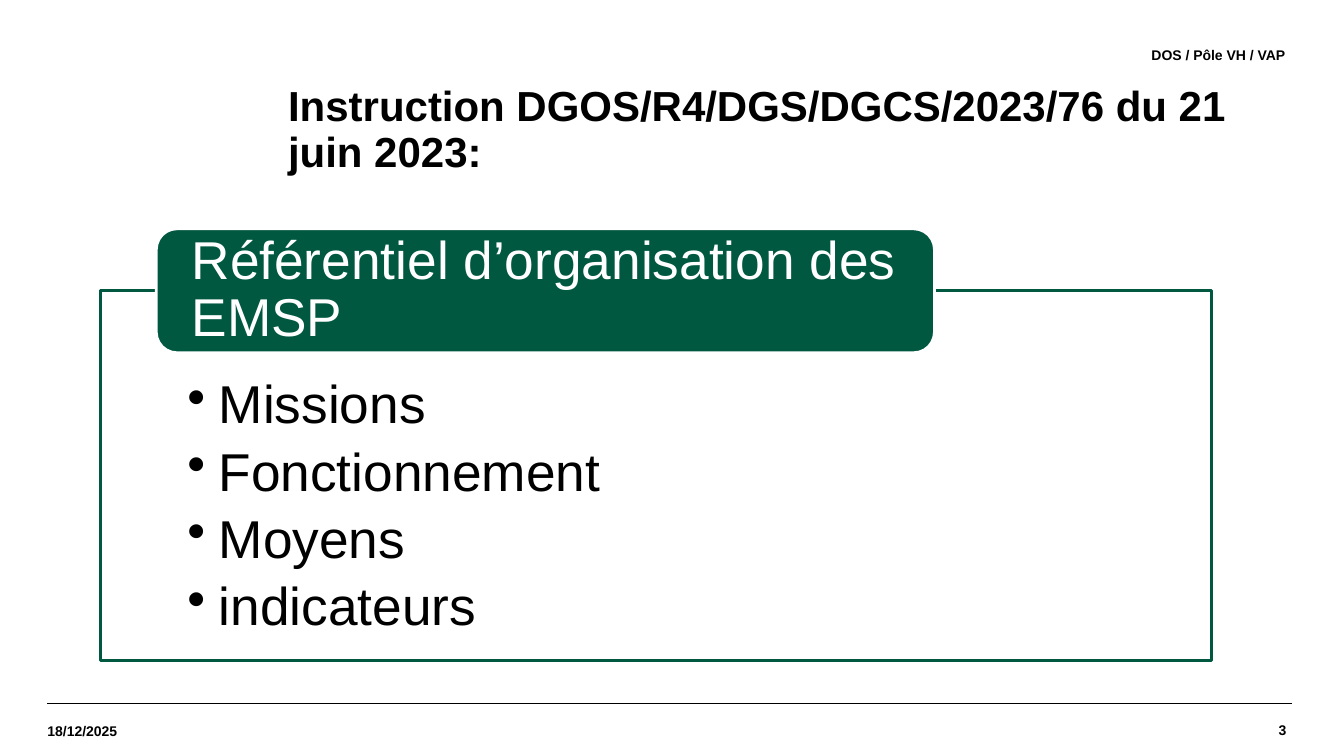
from dataclasses import dataclass
from typing import Optional

import pptx
import pptx.dml.color
import pptx.enum.shapes
import pptx.enum.text
import pptx.oxml
import pptx.oxml.ns
import pptx.util
from lxml import etree

BLACK = pptx.dml.color.RGBColor(0x00, 0x00, 0x00)
WHITE = pptx.dml.color.RGBColor(0xFF, 0xFF, 0xFF)
GREEN = pptx.dml.color.RGBColor(0x00, 0x58, 0x41)

SLIDE_WIDTH = pptx.util.Inches(13.33)
SLIDE_HEIGHT = pptx.util.Inches(7.5)
FONT = "Arial"

ALIGN = pptx.enum.text.PP_ALIGN
ANCHOR = pptx.enum.text.MSO_ANCHOR
SHAPE = pptx.enum.shapes.MSO_SHAPE


@dataclass(frozen=True)
class Area:
    """A rectangle in percent of the slide's width and height."""
    left: float
    top: float
    width: float
    height: float

    def lengths(self) -> tuple:
        return (across(self.left), down(self.top),
                across(self.width), down(self.height))


@dataclass(frozen=True)
class Style:
    """Text settings; insets (left, top, right, bottom) and indent are inches."""
    size: float
    color: pptx.dml.color.RGBColor = BLACK
    bold: bool = False
    align: ALIGN = ALIGN.LEFT
    anchor: ANCHOR = ANCHOR.MIDDLE
    insets: tuple = (0, 0, 0, 0)
    line_spacing: float = 1.0
    space_after: float = 0
    margin: float = 0
    bullet: Optional[str] = None


@dataclass(frozen=True)
class Label:
    area: Area
    text: str
    style: Style


@dataclass(frozen=True)
class Panel:
    kind: SHAPE
    area: Area
    fill: pptx.dml.color.RGBColor
    line: pptx.dml.color.RGBColor
    lines: tuple
    style: Style
    opacity: int = 100


SMALL = Style(10, bold=True)
SMALL_RIGHT = Style(10, bold=True, align=ALIGN.RIGHT)
TITLE = Style(30, bold=True, insets=(0.1, 0.05, 0.1, 0.5),
              line_spacing=0.9, margin=0.02)
HEADING = Style(38, WHITE, insets=(0.29, 0, 0.29, 0), line_spacing=0.9)
BULLETS = Style(38, anchor=ANCHOR.TOP, insets=(0.86, 0.87, 0.86, 0.3),
                line_spacing=0.9, space_after=7, margin=0.31, bullet="•")

RULE_TOP = 93.07
RULE_WIDTH = 92.2
RULE_LEFTS = (3.53, 3.9)

LABELS = (
    Label(Area(80.93, RULE_TOP, 14.78, 6.93), "3", SMALL_RIGHT),
    Label(Area(3.53, 93.33, 12.83, 6.67), "18/12/2025", SMALL),
    Label(Area(20.55, 15.07, 75.45, 10.53),
          "Instruction DGOS/R4/DGS/DGCS/2023/76 du 21 juin 2023:", TITLE),
    Label(Area(31.35, 3.87, 64.28, 6.93), "DOS / Pôle VH / VAP", SMALL_RIGHT),
)

PANELS = (
    Panel(SHAPE.RECTANGLE, Area(7.5, 38.4, 82.65, 48.93), WHITE, GREEN,
          ("Missions", "Fonctionnement", "Moyens", "indicateurs"),
          BULLETS, opacity=90),
    Panel(SHAPE.ROUNDED_RECTANGLE, Area(11.63, 30.27, 57.9, 16.4), GREEN, WHITE,
          ("Référentiel d’organisation des EMSP",), HEADING),
)


def across(percent: float) -> int:
    return round(SLIDE_WIDTH * percent / 100)


def down(percent: float) -> int:
    return round(SLIDE_HEIGHT * percent / 100)


def write_text(frame, lines: tuple, style: Style) -> None:
    frame.word_wrap = True
    frame.vertical_anchor = style.anchor
    (frame.margin_left, frame.margin_top, frame.margin_right,
     frame.margin_bottom) = map(pptx.util.Inches, style.insets)
    for number, line in enumerate(lines):
        para = frame.add_paragraph() if number else frame.paragraphs[0]
        para.text = line
        para.alignment = style.align
        para.line_spacing = style.line_spacing
        para.space_after = pptx.util.Pt(style.space_after)
        indent_paragraph(para, style)
        para.font.name = FONT
        para.font.size = pptx.util.Pt(style.size)
        para.font.bold = style.bold
        para.font.color.rgb = style.color


def indent_paragraph(para, style: Style) -> None:
    margin = pptx.util.Inches(style.margin)
    properties = para._p.get_or_add_pPr()
    properties.set("marL", str(margin))
    properties.set("indent", str(-margin if style.bullet else 0))
    if style.bullet:
        bullet = etree.SubElement(properties, pptx.oxml.ns.qn("a:buChar"))
        bullet.set("char", style.bullet)


def add_rule(page, left: float) -> None:
    rule = page.shapes.add_connector(
        pptx.enum.shapes.MSO_CONNECTOR.STRAIGHT, across(left), down(RULE_TOP),
        across(left + RULE_WIDTH), down(RULE_TOP))
    rule.line.color.rgb = BLACK
    rule.line.width = pptx.util.Pt(0.8)
    etree.SubElement(rule._element.spPr, pptx.oxml.ns.qn("a:effectLst"))


def add_label(page, label: Label) -> None:
    box = page.shapes.add_textbox(*label.area.lengths())
    write_text(box.text_frame, (label.text,), label.style)


def add_panel(page, panel: Panel) -> None:
    box = page.shapes.add_shape(panel.kind, *panel.area.lengths())
    box.shadow.inherit = False
    box.fill.solid()
    box.fill.fore_color.rgb = panel.fill
    if panel.opacity < 100:
        color = box._element.spPr.find(".//" + pptx.oxml.ns.qn("a:srgbClr"))
        alpha = etree.SubElement(color, pptx.oxml.ns.qn("a:alpha"))
        alpha.set("val", str(panel.opacity * 1000))
    box.line.color.rgb = panel.line
    box.line.width = pptx.util.Pt(2)
    write_text(box.text_frame, panel.lines, panel.style)


def main() -> None:
    deck = pptx.Presentation()
    deck.slide_width = SLIDE_WIDTH
    deck.slide_height = SLIDE_HEIGHT
    page = deck.slides.add_slide(deck.slide_layouts[6])
    for left in RULE_LEFTS:
        add_rule(page, left)
    for label in LABELS:
        add_label(page, label)
    for panel in PANELS:
        add_panel(page, panel)
    deck.save("out.pptx")


if __name__ == "__main__":
    main()
